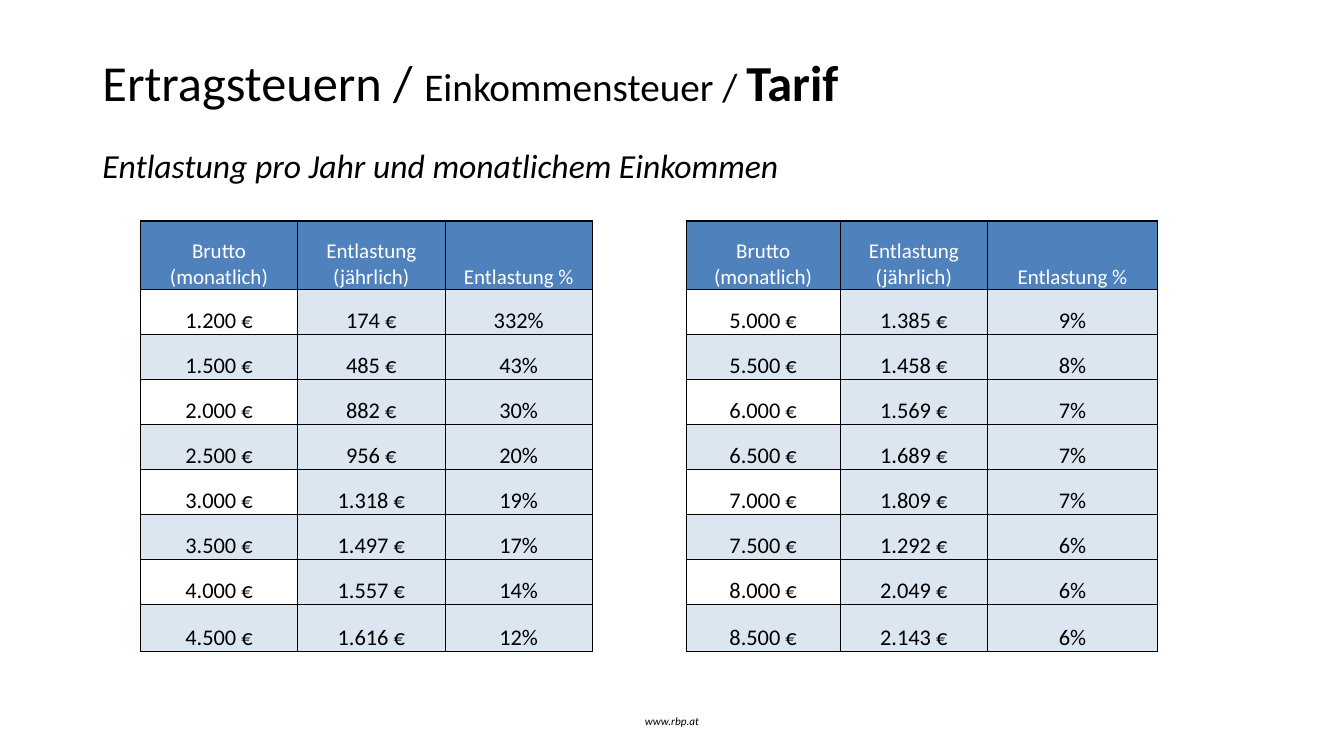
from lxml.etree import SubElement as Sub
from pptx import Presentation
from pptx.dml.color import RGBColor as RGB
from pptx.enum.text import MSO_ANCHOR as Anchor, PP_ALIGN as Align
from pptx.oxml.ns import qn
from pptx.util import Pt

FONT = "Calibri"
BLACK = RGB(0x00, 0x00, 0x00)
WHITE = RGB(0xFF, 0xFF, 0xFF)
BLUE = RGB(0x4F, 0x81, 0xBD)
PALE = RGB(0xDC, 0xE6, 0xF1)
PLAIN = "{2D5ABB26-0587-4C30-8999-92F81FD0307C}"  # no style, no grid
THIN, THICK = 0.5, 1
GAP = 3

HEAD = ["Brutto (monatlich)", "Entlastung (jährlich)", "Entlastung %"]
LOW = [
    ("1.200 €", "174 €", "332%"),
    ("1.500 €", "485 €", "43%"),
    ("2.000 €", "882 €", "30%"),
    ("2.500 €", "956 €", "20%"),
    ("3.000 €", "1.318 €", "19%"),
    ("3.500 €", "1.497 €", "17%"),
    ("4.000 €", "1.557 €", "14%"),
    ("4.500 €", "1.616 €", "12%"),
]
HIGH = [
    ("5.000 €", "1.385 €", "9%"),
    ("5.500 €", "1.458 €", "8%"),
    ("6.000 €", "1.569 €", "7%"),
    ("6.500 €", "1.689 €", "7%"),
    ("7.000 €", "1.809 €", "7%"),
    ("7.500 €", "1.292 €", "6%"),
    ("8.000 €", "2.049 €", "6%"),
    ("8.500 €", "2.143 €", "6%"),
]
WIDTHS = [112.3, 105.3, 105.3, 67, 110, 105.3, 121.3]
HEIGHTS = [49.2] + [32.15] * 7 + [33.2]


def place(shape, left, top, width, height):
    shape.left, shape.top = Pt(left), Pt(top)
    shape.width, shape.height = Pt(width), Pt(height)


def style(para, size, color=BLACK, italic=False, align=Align.LEFT):
    para.alignment = align
    font = para.font
    font.name, font.size, font.italic = FONT, Pt(size), italic
    font.color.rgb = color


def add_title(slide):
    title = slide.shapes.title
    place(title, 66, 28.8, 800, 64.8)
    title.text_frame.vertical_anchor = Anchor.MIDDLE
    para = title.text_frame.paragraphs[0]
    para.line_spacing = 0.9
    style(para, 36)
    for text, size, bold in [("Ertragsteuern / ", 36, False),
                             ("Einkommensteuer / ", 28, False),
                             ("Tarif", 36, True)]:
        run = para.add_run()
        run.text = text
        run.font.size, run.font.bold = Pt(size), bold


def add_body(slide):
    body = slide.placeholders[1]
    place(body, 66, 103, 828, 383)
    para = body.text_frame.paragraphs[0]
    para.text = "Entlastung pro Jahr und monatlichem Einkommen"
    para.line_spacing, para.space_before = 0.9, Pt(0)
    props = para._p.get_or_add_pPr()
    props.set("marL", "0")
    props.set("indent", "0")
    Sub(props, qn("a:buNone"))
    style(para, 24, italic=True)


def add_footer(slide):
    box = slide.shapes.add_textbox(Pt(318), Pt(500.4), Pt(324), Pt(28.8))
    frame = box.text_frame
    frame.word_wrap = True
    frame.vertical_anchor = Anchor.MIDDLE
    para = frame.paragraphs[0]
    para.text = "www.rbp.at"
    style(para, 8, italic=True, align=Align.CENTER)


def add_edge(cell, side, width):
    line = Sub(cell._tc.get_or_add_tcPr(), qn("a:ln" + side), w=str(Pt(width)))
    fill = Sub(line, qn("a:solidFill"))
    Sub(fill, qn("a:srgbClr"), val=str(BLACK))


def fill_cell(cell, text, row, col):
    """Format one cell; col counts from the left of its own block."""
    head = row == 0
    outer = {"L": col == 0, "R": col == 2, "T": head, "B": row == len(LOW)}
    for side, edge in outer.items():
        add_edge(cell, side, THICK if edge else THIN)
    if col == 0 and row % 2:
        cell.fill.background()
    else:
        cell.fill.solid()
        cell.fill.fore_color.rgb = BLUE if head else PALE
    cell.vertical_anchor = Anchor.BOTTOM
    cell.margin_left = cell.margin_right = cell.margin_top = Pt(0.7)
    cell.margin_bottom = Pt(0)
    cell.text = text
    style(cell.text_frame.paragraphs[0], 15 if head else 16,
          WHITE if head else BLACK, align=Align.CENTER)


def add_relief(slide):
    frame = slide.shapes.add_table(len(HEIGHTS), len(WIDTHS), Pt(100.3),
                                   Pt(157.8), Pt(sum(WIDTHS)), Pt(sum(HEIGHTS)))
    table = frame.table
    table.horz_banding = False
    table._tbl.tblPr.find(qn("a:tableStyleId")).text = PLAIN
    for column, width in zip(table.columns, WIDTHS):
        column.width = Pt(width)
    for row, height in zip(table.rows, HEIGHTS):
        row.height = Pt(height)
    for start, block in [(0, LOW), (GAP + 1, HIGH)]:
        for row, texts in enumerate([HEAD] + block):
            for col, text in enumerate(texts):
                fill_cell(table.cell(row, start + col), text, row, col)
    for row in range(len(HEIGHTS)):
        cell = table.cell(row, GAP)
        add_edge(cell, "L", THICK)
        add_edge(cell, "R", THICK)
        cell.fill.background()


def main():
    deck = Presentation()
    deck.slide_width, deck.slide_height = Pt(960), Pt(540)
    slide = deck.slides.add_slide(deck.slide_layouts[1])
    add_title(slide)
    add_body(slide)
    add_footer(slide)
    add_relief(slide)
    deck.save("out.pptx")


if __name__ == "__main__":
    main()
